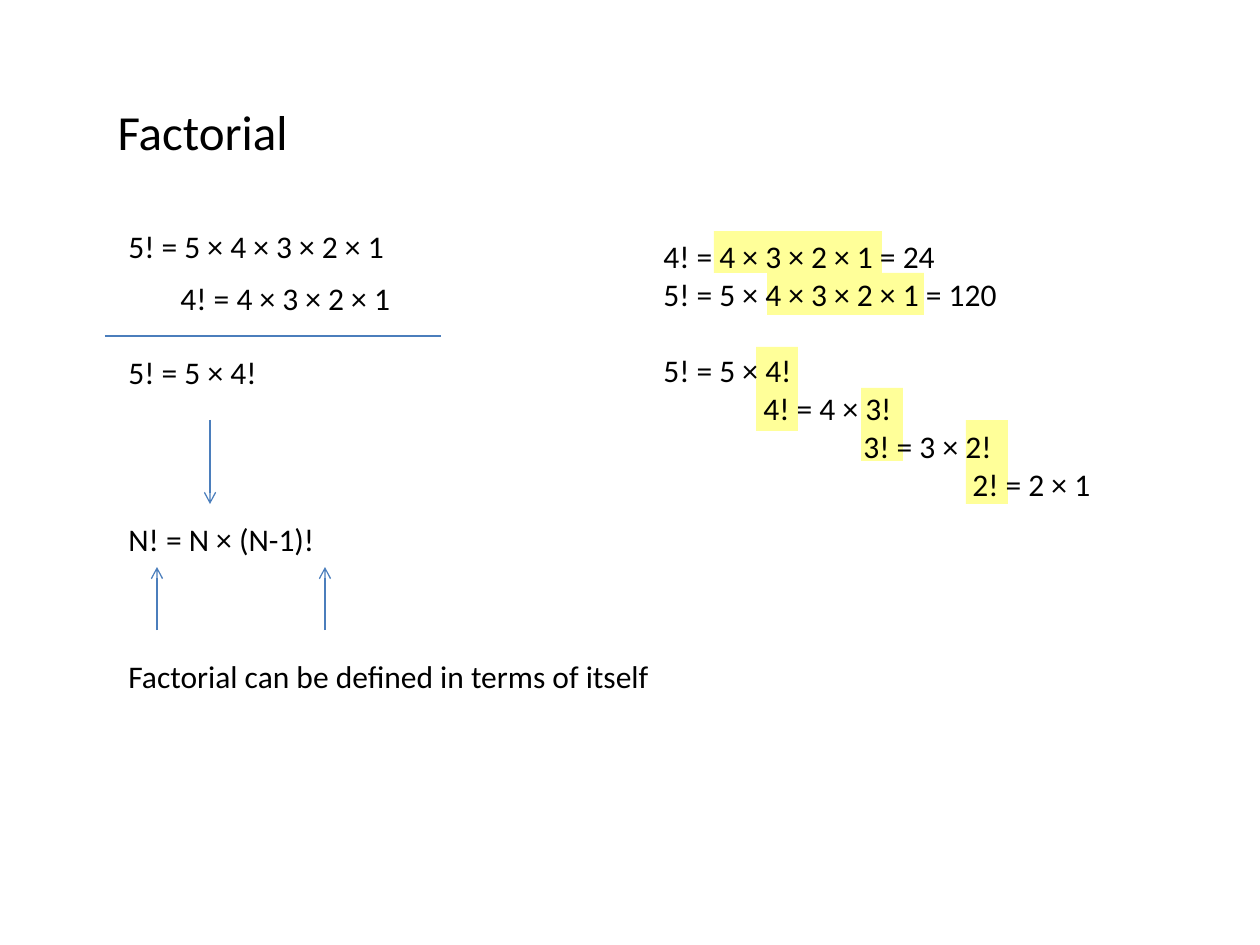
from dataclasses import dataclass

from lxml.etree import SubElement
from pptx import Presentation
from pptx.dml.color import RGBColor
from pptx.enum.shapes import MSO_CONNECTOR, MSO_SHAPE
from pptx.enum.text import MSO_ANCHOR, MSO_AUTO_SIZE, PP_ALIGN
from pptx.oxml.ns import qn
from pptx.util import Emu, Pt


def px(length):
    """Turn whole pixels into EMU at 126 pixels to the inch."""
    return Emu(round(length * 914400 / 126))


@dataclass(frozen=True)
class Theme:
    """Colours, font and type sizes of the slide."""
    font: str = "Calibri"
    text: RGBColor = RGBColor(0x00, 0x00, 0x00)
    highlight: RGBColor = RGBColor(0xFF, 0xFF, 0x99)
    line: RGBColor = RGBColor(0x4B, 0x7E, 0xBC)
    title_size: int = 28
    body_size: int = 18
    line_width: float = 0.75


def write(paragraph, text, *, font, size, color, indent=0, before=0):
    """Fill a paragraph with formatted, left-aligned text."""
    run = paragraph.add_run()
    run.text = text
    run.font.name = font
    run.font.size = Pt(size)
    run.font.color.rgb = color
    paragraph.alignment = PP_ALIGN.LEFT
    paragraph.space_before = Pt(before)
    if indent:
        properties = paragraph._p.get_or_add_pPr()
        properties.set("marL", str(px(indent)))
        properties.set("indent", "0")


class SlideBuilder:
    """Holds the theme and the current slide, and adds elements to it."""

    def __init__(self, slide, theme):
        """Keep the slide and the theme."""
        self.slide = slide
        self.theme = theme

    def title(self, text, left, top, width, height):
        """Place and format the title placeholder."""
        shape = self.slide.shapes.title
        shape.left, shape.top = px(left), px(top)
        shape.width, shape.height = px(width), px(height)
        frame = shape.text_frame
        frame.word_wrap = False
        frame.auto_size = MSO_AUTO_SIZE.SHAPE_TO_FIT_TEXT
        frame.vertical_anchor = MSO_ANCHOR.TOP
        write(frame.paragraphs[0], text, font=self.theme.font,
              size=self.theme.title_size, color=self.theme.text)

    def text(self, lines, left, top, width, height, wrap=False):
        """Add a text box of (text, indent, space before) lines."""
        shape = self.slide.shapes.add_textbox(px(left), px(top), px(width), px(height))
        frame = shape.text_frame
        frame.word_wrap = wrap
        frame.auto_size = MSO_AUTO_SIZE.SHAPE_TO_FIT_TEXT
        for number, (text, indent, before) in enumerate(lines):
            paragraph = frame.add_paragraph() if number else frame.paragraphs[0]
            write(paragraph, text, font=self.theme.font, size=self.theme.body_size,
                  color=self.theme.text, indent=indent, before=before)

    def highlight(self, left, top, width, height):
        """Add a plain highlight rectangle."""
        shape = self.slide.shapes.add_shape(
            MSO_SHAPE.RECTANGLE, px(left), px(top), px(width), px(height))
        shape.shadow.inherit = False
        shape.fill.solid()
        shape.fill.fore_color.rgb = self.theme.highlight
        shape.line.fill.background()

    def line(self, start, end, arrow=False):
        """Add a straight line, with an arrowhead at its end if asked."""
        connector = self.slide.shapes.add_connector(
            MSO_CONNECTOR.STRAIGHT, *map(px, start + end))
        connector.line.color.rgb = self.theme.line
        connector.line.width = Pt(self.theme.line_width)
        if arrow:
            SubElement(connector.line._get_or_add_ln(), qn("a:tailEnd"), type="arrow")
        SubElement(connector._element.spPr, qn("a:effectLst"))


def main():
    """Build the factorial slide and save it."""
    presentation = Presentation()
    presentation.slide_width, presentation.slide_height = px(1260), px(945)
    slide = presentation.slides.add_slide(presentation.slide_layouts[5])
    builder = SlideBuilder(slide, Theme())

    builder.title("Factorial", 105, 95, 196, 72)
    for box in ((966, 420, 42, 84), (861, 388, 42, 73), (714, 231, 168, 42),
                (756, 347, 42, 84), (767, 273, 157, 42)):
        builder.highlight(*box)

    for text, left, top, width in (
            ("5! = 5 × 4 × 3 × 2 × 1", 116, 221, 326),
            ("4! = 4 × 3 × 2 × 1", 168, 273, 273),
            ("5! = 5 × 4!", 116, 347, 168),
            ("N! = N × (N-1)!", 116, 514, 233),
            ("Factorial can be defined in terms of itself", 116, 651, 596)):
        builder.text([(text, 0, 0)], left, top, width, 50)

    builder.line((105, 336), (441, 336))
    builder.line((210, 420), (210, 504), arrow=True)
    for left in (157, 325):
        builder.line((left, 630), (left, 567), arrow=True)

    builder.text([
        ("4! = 4 × 3 × 2 × 1 = 24", 0, 0),
        ("5! = 5 × 4 × 3 × 2 × 1 = 120", 0, 0),
        ("5! = 5 × 4!", 0, 22),
        ("4! = 4 × 3!", 100, 0),
        ("3! = 3 × 2!", 200, 0),
        ("2! = 2 × 1", 309, 0),
    ], 651, 231, 514, 280, wrap=True)

    presentation.save("out.pptx")


if __name__ == "__main__":
    main()
